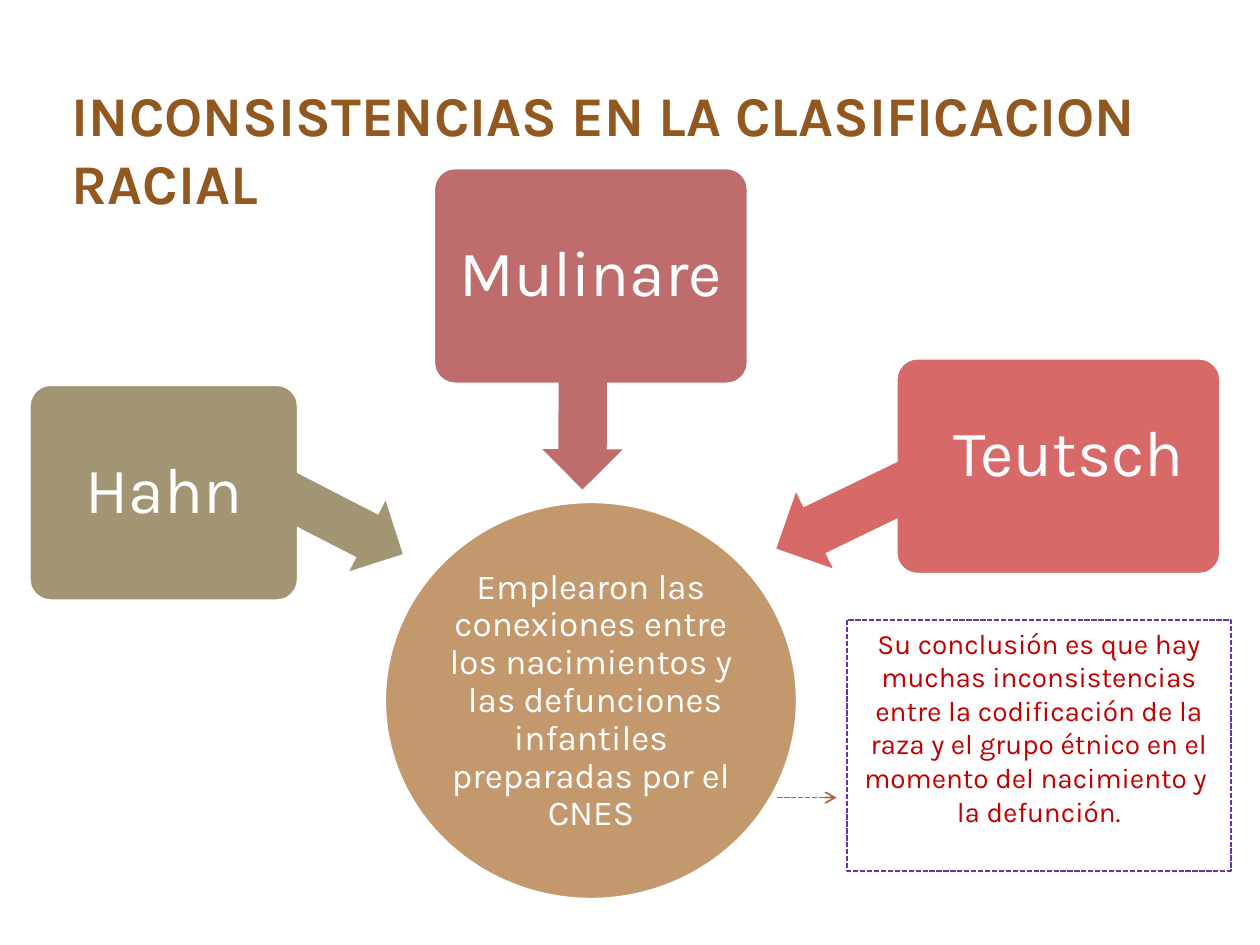
import pptx
import pptx.util
import pptx.dml.color
import pptx.enum.dml
import pptx.enum.shapes
import pptx.enum.text
import pptx.oxml

Inches = pptx.util.Inches
Pt = pptx.util.Pt
RGBColor = pptx.dml.color.RGBColor
SHAPE = pptx.enum.shapes.MSO_SHAPE
ALIGN = pptx.enum.text.PP_ALIGN
ANCHOR = pptx.enum.text.MSO_ANCHOR
DASH = pptx.enum.dml.MSO_LINE

FONT = "Karla"
WHITE = RGBColor(0xFF, 0xFF, 0xFF)
BROWN = RGBColor(0x91, 0x58, 0x1F)
TAN = RGBColor(0xC3, 0x98, 0x6D)
CORAL = RGBColor(0xD8, 0x69, 0x69)
ROSE = RGBColor(0xBF, 0x6C, 0x6C)
OLIVE = RGBColor(0xA1, 0x95, 0x74)
PURPLE = RGBColor(0x70, 0x30, 0xA0)
RED = RGBColor(0xC0, 0x00, 0x00)
RUST = RGBColor(0xA5, 0x64, 0x4E)

# Author, colour, card box, text box, arrow box, arrow rotation
AUTHORS = [
    ("Teutsch", CORAL, (7.11, 2.84, 2.58, 1.72), (7.25, 2.81, 2.46, 1.61),
     (6.1, 3.75, 1.24, 0.67), 334.2),
    ("Mulinare", ROSE, (3.44, 1.33, 2.5, 1.72), (3.5, 1.38, 2.38, 1.61),
     (3.97, 2.91, 1.31, 0.64), 270.2),
    ("Hahn", OLIVE, (0.23, 3.05, 2.14, 1.72), (0.28, 3.1, 2.04, 1.61),
     (2.11, 3.82, 1.15, 0.63), 207.2),
]


def inches(box):
    return [Inches(length) for length in box]


def write(frame, text, size, color, bold=False, align=ALIGN.CENTER,
          anchor=ANCHOR.MIDDLE, spacing=None, inset=None):
    frame.word_wrap = True
    frame.auto_size = pptx.enum.text.MSO_AUTO_SIZE.NONE
    frame.vertical_anchor = anchor
    if inset is not None:
        frame.margin_left = frame.margin_right = Inches(inset)
        frame.margin_top = frame.margin_bottom = Inches(inset)
    para = frame.paragraphs[0]
    para.alignment = align
    if spacing:
        para.line_spacing = spacing
    span = para.add_run()
    span.text = text
    span.font.name = FONT
    span.font.size = Pt(size)
    span.font.bold = bold
    span.font.color.rgb = color


def add_filled(page, kind, box, fill, line=None):
    shape = page.shapes.add_shape(kind, *inches(box))
    shape.shadow.inherit = False
    shape.fill.solid()
    shape.fill.fore_color.rgb = fill
    if line is None:
        shape.line.fill.background()
    else:
        shape.line.color.rgb = line
        shape.line.width = Pt(2)
    return shape


def add_label(page, box, text, size, inset):
    label = page.shapes.add_textbox(*inches(box))
    write(label.text_frame, text, size, WHITE, spacing=0.9, inset=inset)


def add_title(page, box, text):
    title = page.shapes.title
    title.left, title.top, title.width, title.height = inches(box)
    write(title.text_frame, text, 32, BROWN, bold=True, align=ALIGN.LEFT)


def add_center(page, box, text):
    left, top, width, height = box
    add_filled(page, SHAPE.OVAL, box, TAN, WHITE)
    text_box = (left + 0.48, top + 0.47, width - 0.96, height - 0.93)
    add_label(page, text_box, text, 20, 0.01)


def add_author(page, name, color, card_box, text_box, arrow_box, rotation):
    card = add_filled(page, SHAPE.ROUNDED_RECTANGLE, card_box, color, WHITE)
    card.adjustments[0] = 0.1
    add_label(page, text_box, name, 37, 0.08)
    arrow = add_filled(page, SHAPE.LEFT_ARROW, arrow_box, color)
    arrow.adjustments[0] = 0.6
    arrow.adjustments[1] = 0.5
    arrow.rotation = rotation


def add_conclusion(page, box, text):
    note = page.shapes.add_shape(SHAPE.RECTANGLE, *inches(box))
    note.shadow.inherit = False
    note.fill.background()
    note.line.color.rgb = PURPLE
    note.line.width = Pt(1)
    note.line.dash_style = DASH.SQUARE_DOT
    write(note.text_frame, text, 16, RED, anchor=ANCHOR.TOP)

    # Dashed arrow from the circle to the note
    left, y = box[0], 6.33
    link = page.shapes.add_connector(
        pptx.enum.shapes.MSO_CONNECTOR.STRAIGHT,
        *inches((left - 0.55, y, left - 0.08, y)))
    link.line.color.rgb = RUST
    link.line.width = Pt(1)
    link.line.dash_style = DASH.SQUARE_DOT
    namespace = pptx.oxml.ns.nsdecls("a")
    link.line._get_or_add_ln().append(
        pptx.oxml.parse_xml(f'<a:tailEnd {namespace} type="arrow"/>'))
    link._element.spPr.append(
        pptx.oxml.parse_xml(f"<a:effectLst {namespace}/>"))


def main():
    deck = pptx.Presentation()
    deck.slide_width, deck.slide_height = Inches(10), Inches(7.5)
    page = deck.slides.add_slide(deck.slide_layouts.get_by_name("Title Only"))
    add_title(page, (0.47, 0.55, 9, 1.25),
              "INCONSISTENCIAS EN LA CLASIFICACION RACIAL")
    add_center(page, (3.05, 3.98, 3.28, 3.16),
               "Emplearon las conexiones entre los nacimientos y  las "
               "defunciones infantiles preparadas por el CNES")
    for author in AUTHORS:
        add_author(page, *author)
    add_conclusion(page, (6.72, 4.92, 3.05, 1.99),
                   "Su conclusión es que hay muchas inconsistencias entre la "
                   "codificación de la raza y el grupo étnico en el momento "
                   "del nacimiento y  la defunción.")
    deck.save("out.pptx")


if __name__ == "__main__":
    main()
